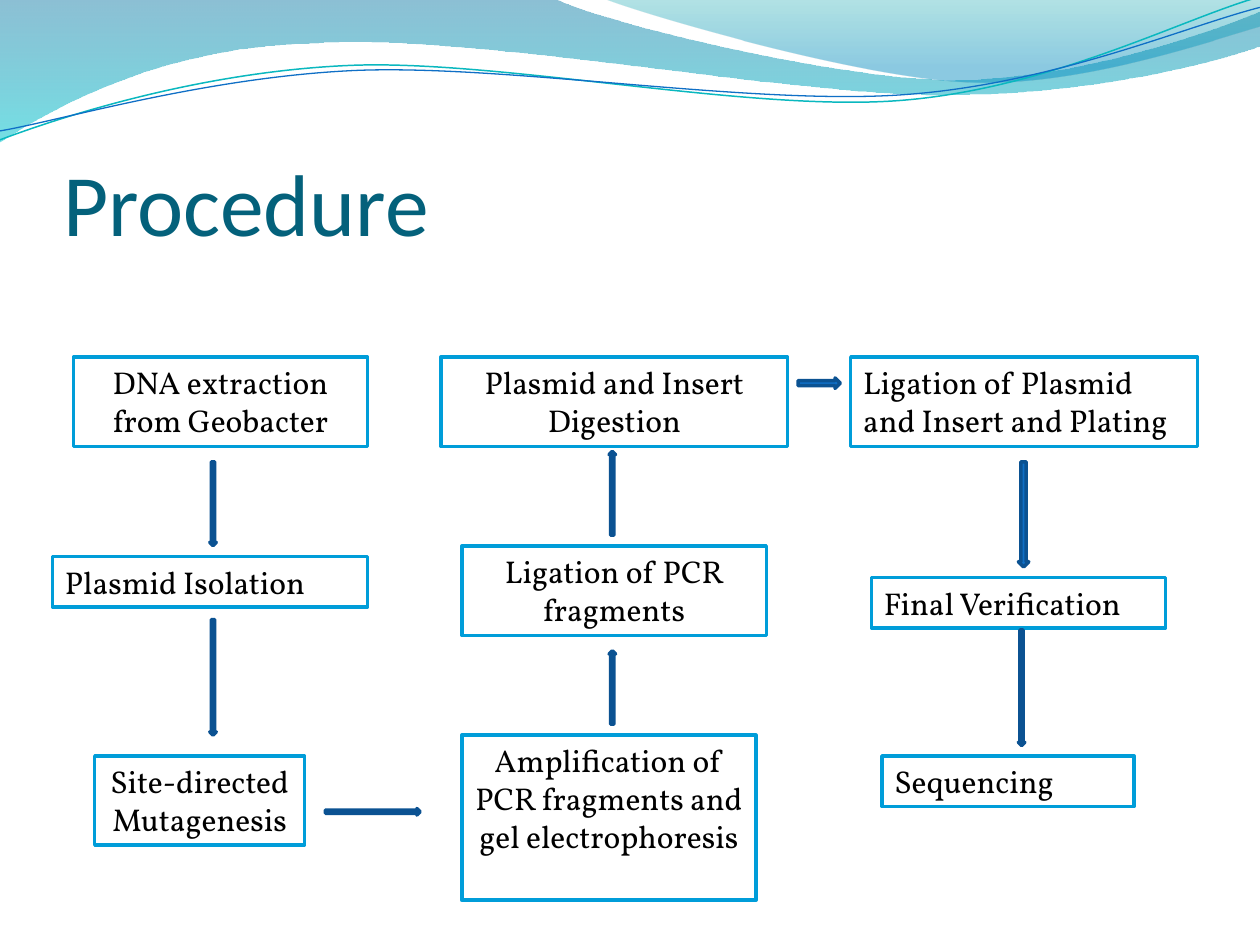
from lxml.etree import Element, SubElement
from pptx import Presentation
from pptx.dml.color import RGBColor
from pptx.enum.shapes import MSO_SHAPE
from pptx.enum.text import MSO_ANCHOR, MSO_AUTO_SIZE, PP_ALIGN
from pptx.oxml.ns import qn
from pptx.util import Cm, Pt


def color(hex_value):
    return RGBColor.from_string(hex_value)


def write_text(shape, text, font="Vollkorn", size=18, hex_value="000000",
               align=PP_ALIGN.LEFT, anchor=MSO_ANCHOR.TOP):
    frame = shape.text_frame
    frame.word_wrap = True
    frame.auto_size = MSO_AUTO_SIZE.NONE
    frame.vertical_anchor = anchor
    frame.text = text
    paragraph = frame.paragraphs[0]
    paragraph.alignment = align
    paragraph.font.name = font
    paragraph.font.size = Pt(size)
    paragraph.font.color.rgb = color(hex_value)


presentation = Presentation()
presentation.slide_width, presentation.slide_height = Cm(25.4), Cm(19.05)
slide = presentation.slides.add_slide(presentation.slide_layouts[5])
shapes = slide.shapes

# Waves: two numbers draw a line, six a Bezier curve (two controls, end), in cm.
# Gradient stops are (position, colour, opacity in percent).
waves = [
    dict(start=(0, 0), segments=[
        (11.18, -0.03),
        (12.09, 0.43, 16.87, 1.6, 19.25, 1.6),
        (21.67, 1.6, 24.33, 0.66, 25.4, 0.23),
        (25.43, 0.91),
        (24.97, 1.12, 22.1, 1.93, 18.95, 1.91),
        (15.8, 1.91, 9.7, 0.71, 6.53, 0.86),
        (3.28, 0.91, 1.17, 2.11, -0.03, 2.87),
        (0, 0),
    ], stops=[(0, "0074A1", 45), (1, "00C6CF", 55)]),
    dict(start=(12.17, -0.03), segments=[
        (12.93, 0.28, 17.32, 1.57, 19.53, 1.65),
        (21.74, 1.75, 24.41, 0.81, 25.4, 0.53),
        (25.4, 0),
        (12.17, -0.03),
    ], stops=[(0, "00A1A9", 30), (0.8, "008BBF", 45)]),
    dict(start=(0, 2.82), segments=[
        (1.22, 2.36, 4.01, 1.45, 7.04, 1.32),
        (10.03, 1.19, 15.06, 2.26, 18.11, 2.03),
        (21.16, 1.8, 23.83, 0.38, 25.35, -0.05),
    ], line=("0AB8BF", 0.85)),
    dict(start=(0, 2.64), segments=[
        (1.19, 2.44, 4.17, 1.55, 7.19, 1.42),
        (10.24, 1.3, 15.16, 2.13, 18.21, 1.91),
        (21.23, 1.7, 23.9, 0.53, 25.4, 0.15),
    ], line=("0F6FC6", 0.75)),
]
for wave in waves:
    start_x, start_y = map(Cm, wave["start"])
    ends = [(Cm(segment[-2]), Cm(segment[-1])) for segment in wave["segments"]]
    builder = shapes.build_freeform(start_x, start_y)
    builder.add_line_segments(ends, close="stops" in wave)
    shape = builder.convert_to_shape()
    shape.shadow.inherit = False

    # Turn the straight segments that have control points into curves
    lines = list(shape._element.spPr.iter(qn("a:lnTo")))
    for line, segment in zip(lines, wave["segments"]):
        if len(segment) == 6:
            line.tag = qn("a:cubicBezTo")
            for index in (0, 1):
                control_x, control_y = map(Cm, segment[2 * index:2 * index + 2])
                line.insert(index, Element(qn("a:pt"), x=str(control_x - shape.left),
                                           y=str(control_y - shape.top)))

    if "stops" in wave:
        shape.line.fill.background()
        shape.fill.gradient()
        shape.fill.gradient_angle = 270
        for stop, (position, hex_value, _) in zip(shape.fill.gradient_stops, wave["stops"]):
            stop.position = position
            stop.color.rgb = color(hex_value)
        stop_colors = shape._element.spPr.iter(qn("a:srgbClr"))
        for stop_color, (_, _, opacity) in zip(stop_colors, wave["stops"]):
            SubElement(stop_color, qn("a:alpha")).set("val", str(opacity * 1000))
    else:
        hex_value, width = wave["line"]
        shape.fill.background()
        shape.line.color.rgb = color(hex_value)
        shape.line.width = Pt(width)

title = shapes.title
title.left, title.top, title.width, title.height = Cm(1.27), Cm(1.96), Cm(22.86), Cm(3.17)
write_text(title, "Procedure", font="Calibri", size=50, hex_value="04617B",
           anchor=MSO_ANCHOR.BOTTOM)
title.text_frame.margin_left = title.text_frame.margin_right = Cm(0)
title.text_frame.margin_bottom = Cm(0)

# Steps of the procedure: text, alignment, left, top, width, height
ONE_LINE, TWO_LINES = 1.02, 1.8
steps = [
    ("DNA extraction from Geobacter", PP_ALIGN.CENTER, 1.48, 7.2, 5.93, TWO_LINES),
    ("Plasmid Isolation", PP_ALIGN.LEFT, 1.06, 11.22, 6.35, ONE_LINE),
    ("Site-directed Mutagenesis", PP_ALIGN.CENTER, 1.91, 15.24, 4.23, TWO_LINES),
    ("Amplification of PCR fragments and gel electrophoresis", PP_ALIGN.CENTER,
     9.31, 14.82, 5.93, 3.33),
    ("Ligation of PCR fragments", PP_ALIGN.CENTER, 9.31, 11.01, 6.14, TWO_LINES),
    ("Plasmid and Insert Digestion", PP_ALIGN.CENTER, 8.89, 7.2, 6.99, TWO_LINES),
    ("Ligation of Plasmid and Insert and Plating", PP_ALIGN.LEFT, 17.15, 7.2, 6.99, TWO_LINES),
    ("Final Verification", PP_ALIGN.LEFT, 17.57, 11.64, 5.93, ONE_LINE),
    ("Sequencing", PP_ALIGN.LEFT, 17.78, 15.24, 5.08, ONE_LINE),
]
for text, align, *box in steps:
    shape = shapes.add_shape(MSO_SHAPE.RECTANGLE, *map(Cm, box))
    shape.shadow.inherit = False
    shape.fill.solid()
    shape.fill.fore_color.rgb = color("FFFFFF")
    shape.line.color.rgb = color("009DD9")
    shape.line.width = Pt(2)
    write_text(shape, text, align=align)

# Arrows in the order of the steps: kind, left, top, width, height
arrows = [
    (MSO_SHAPE.DOWN_ARROW, 4.23, 9.31, 0.13, 1.69),
    (MSO_SHAPE.DOWN_ARROW, 4.23, 12.49, 0.13, 2.33),
    (MSO_SHAPE.RIGHT_ARROW, 6.56, 16.3, 1.91, 0.13),
    (MSO_SHAPE.UP_ARROW, 12.28, 13.12, 0.13, 1.48),
    (MSO_SHAPE.UP_ARROW, 12.28, 9.1, 0.13, 1.69),
    (MSO_SHAPE.RIGHT_ARROW, 16.09, 7.62, 0.85, 0.21),
    (MSO_SHAPE.DOWN_ARROW, 20.53, 9.31, 0.21, 2.12),
    (MSO_SHAPE.DOWN_ARROW, 20.53, 12.7, 0.13, 2.33),
]
for kind, *box in arrows:
    shape = shapes.add_shape(kind, *map(Cm, box))
    shape.shadow.inherit = False
    shape.fill.solid()
    shape.fill.fore_color.rgb = color("0F6FC6")
    shape.line.color.rgb = color("0B5292")
    shape.line.width = Pt(2)

presentation.save("out.pptx")
